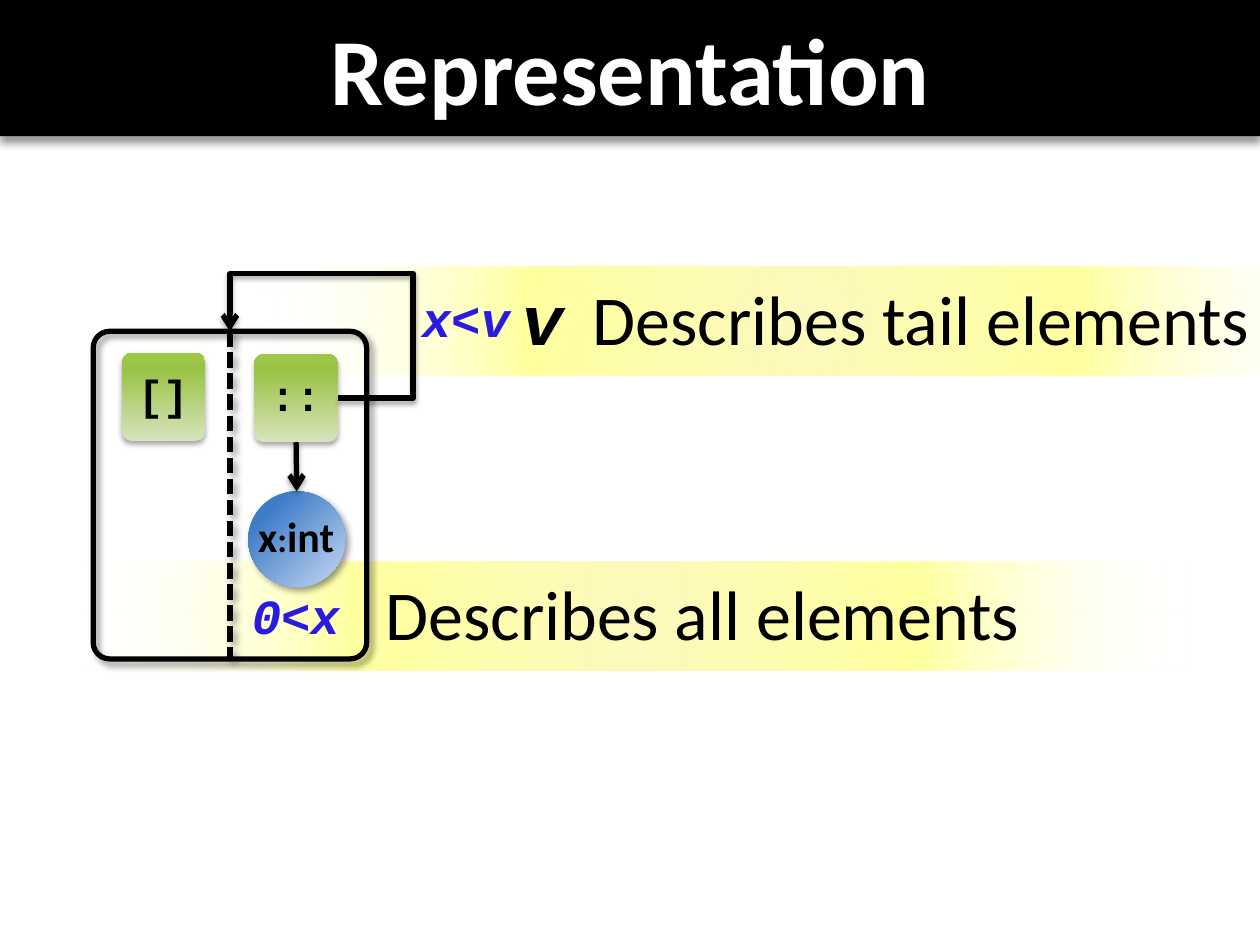
from dataclasses import dataclass
from typing import NamedTuple, Optional

from pptx import Presentation
from pptx.dml.color import RGBColor
from pptx.enum.dml import MSO_LINE
from pptx.enum.shapes import MSO_CONNECTOR as CXN, MSO_SHAPE as SHAPE
from pptx.enum.text import MSO_ANCHOR as ANCHOR, PP_ALIGN as ALIGN
from pptx.oxml import parse_xml
from pptx.oxml.ns import nsdecls, qn
from pptx.util import Inches, Pt


class Gradient(NamedTuple):
    stops: tuple  # (position %, colour, opacity %)
    direction: str  # DrawingML direction element


class Shadow(NamedTuple):
    opacity: int
    blur: float
    distance: float
    angle: int


class Run(NamedTuple):
    text: str
    size: int
    font: str
    color: str
    bold: bool = False
    italic: bool = False


class Box(NamedTuple):
    left: float
    top: float
    width: float
    height: float


def focus(l: int, t: int, r: int, b: int) -> str:
    return (f'<a:path path="circle"><a:fillToRect l="{l}000" t="{t}000" '
            f'r="{r}000" b="{b}000"/></a:path>')


@dataclass(frozen=True)
class Theme:
    black: str = "000000"
    white: str = "FFFFFF"
    predicate: str = "291BDF"
    sans: str = "Calibri"
    mono: str = "Courier New"
    title: int = 54
    body: int = 40
    formula: int = 28
    node: int = 24
    colon: int = 20
    stroke: float = 3
    band: Gradient = Gradient(
        ((0, "FDF9BF", 100), (51, "FFFF9F", 100), (100, "FFFFFF", 0)), focus(50, 50, 50, 50))
    green: Gradient = Gradient(
        ((0, "D7E4BD", 100), (80, "9BC348", 100), (100, "9DC746", 100)),
        '<a:lin ang="16200000" scaled="0"/>')
    blue: Gradient = Gradient(
        ((0, "C6D9F1", 100), (80, "3D7CC7", 100), (100, "3A7CCB", 100)), focus(100, 100, 0, 0))
    bar_shadow: Shadow = Shadow(40, 4, 4, 90)
    soft: Shadow = Shadow(40, 4, 3, 45)
    low: Shadow = Shadow(35, 3.1, 1.8, 90)


T = Theme()


def gradient_xml(g: Gradient):
    stops = "".join(
        f'<a:gs pos="{pos}000"><a:srgbClr val="{color}"><a:alpha val="{alpha}000"/>'
        f'</a:srgbClr></a:gs>' for pos, color, alpha in g.stops)
    return parse_xml(f'<a:gradFill {nsdecls("a")} rotWithShape="1">'
                     f'<a:gsLst>{stops}</a:gsLst>{g.direction}</a:gradFill>')


def effect_xml(shadow: Optional[Shadow]):
    inner = ""
    if shadow:
        inner = (f'<a:outerShdw blurRad="{Pt(shadow.blur)}" dist="{Pt(shadow.distance)}" '
                 f'dir="{shadow.angle * 60000}" algn="ctr" rotWithShape="0">'
                 f'<a:srgbClr val="{T.black}"><a:alpha val="{shadow.opacity}000"/>'
                 f'</a:srgbClr></a:outerShdw>')
    return parse_xml(f'<a:effectLst {nsdecls("a")}>{inner}</a:effectLst>')


def write(tf, runs, *, align=ALIGN.LEFT, anchor=ANCHOR.TOP, wrap=False, margins=None):
    """Fill a text frame with one paragraph of formatted runs."""
    tf.word_wrap, tf.vertical_anchor = wrap, anchor
    if margins:
        tf.margin_left, tf.margin_top, tf.margin_right, tf.margin_bottom = map(Inches, margins)
    p = tf.paragraphs[0]
    p.alignment = align
    for run in runs:
        r = p.add_run()
        r.text = run.text
        f = r.font
        f.size, f.name, f.bold, f.italic = Pt(run.size), run.font, run.bold, run.italic
        f.color.rgb = RGBColor.from_string(run.color)


def add_shape(s, kind, box: Box, *, fill=None, stroke=False, shadow=None, corner=None, runs=()):
    sp = s.shapes.add_shape(kind, *map(Inches, box))
    if corner is not None:
        sp.adjustments[0] = corner
    sp.fill.background()
    if isinstance(fill, Gradient):
        spPr = sp.element.spPr
        spPr.replace(spPr.find(qn("a:noFill")), gradient_xml(fill))
    elif fill:
        sp.fill.solid()
        sp.fill.fore_color.rgb = RGBColor.from_string(fill)
    if stroke:
        sp.line.color.rgb = RGBColor.from_string(T.black)
        sp.line.width = Pt(T.stroke)
    else:
        sp.line.fill.background()
    sp.element.spPr.append(effect_xml(shadow))
    if runs:
        write(sp.text_frame, runs, align=ALIGN.CENTER, anchor=ANCHOR.MIDDLE,
              margins=(0.09, 0, 0.1, 0.05))
    return sp


def add_link(s, start, start_side: int, end, end_side: int, *, shadow, kind=CXN.STRAIGHT,
             dashed=False, arrow=False):
    c = s.shapes.add_connector(kind, 0, 0, 0, 0)
    c.begin_connect(start, start_side)
    c.end_connect(end, end_side)
    c.line.color.rgb = RGBColor.from_string(T.black)
    c.line.width = Pt(T.stroke)
    if dashed:
        c.line.dash_style = MSO_LINE.SQUARE_DOT
    spPr = c.element.spPr
    if arrow:
        spPr.find(qn("a:ln")).append(parse_xml(f'<a:tailEnd {nsdecls("a")} type="arrow"/>'))
    spPr.append(effect_xml(shadow))
    return c


def add_text(s, box: Box, runs, *, wrap=False):
    write(s.shapes.add_textbox(*map(Inches, box)).text_frame, runs, wrap=wrap)


def main():
    prs = Presentation()
    prs.slide_width, prs.slide_height = Inches(10), Inches(7.5)
    s = prs.slides.add_slide(prs.slide_layouts[5])

    # Title on its bar
    title = s.shapes.title
    title.left, title.top, title.width, title.height = map(Inches, Box(0, 0, 10, 1.25))
    write(title.text_frame, [Run("Representation", T.title, T.sans, T.white, True)],
          align=ALIGN.CENTER, wrap=True, margins=(0.1, 0.09, 0.1, 0.05))
    bar = add_shape(s, SHAPE.RECTANGLE, Box(0, 0, 10, 1.08), fill=T.black, shadow=T.bar_shadow)
    title.element.addprevious(bar.element)

    # Highlight bands behind the descriptions
    for box in (Box(2.08, 2.12, 8.58, 0.86), Box(0.67, 4.46, 8.75, 0.86)):
        add_shape(s, SHAPE.ROUNDED_RECTANGLE, box, fill=T.band, corner=0.06)

    # List type: frame, two constructors and the element
    frame = add_shape(s, SHAPE.ROUNDED_RECTANGLE, Box(0.74, 2.63, 2.17, 2.6),
                      stroke=True, shadow=T.soft, corner=0.06)
    nil, cons = [
        add_shape(s, SHAPE.ROUNDED_RECTANGLE, Box(left, top, 0.66, 0.7), fill=T.green,
                  shadow=T.low, corner=0.12, runs=[Run(text, T.node, T.mono, T.black, True)])
        for text, left, top in (("[]", 0.97, 2.8), ("::", 2.02, 2.81))]
    element = add_shape(s, SHAPE.OVAL, Box(1.97, 3.9, 0.77, 0.76), fill=T.blue, shadow=T.soft,
                        runs=[Run(text, size, T.sans, T.black, True) for text, size in
                              (("x", T.node), (":", T.colon), ("int", T.node))])

    # Links: head, recursive tail and the divider
    add_link(s, cons, 2, element, 0, shadow=T.low, arrow=True)
    tail = add_link(s, cons, 3, frame, 0, shadow=T.low, kind=CXN.ELBOW, arrow=True)
    geom = tail.element.spPr.find(qn("a:prstGeom"))
    geom.getparent().replace(geom, parse_xml(
        f'<a:prstGeom {nsdecls("a")} prst="bentConnector4"><a:avLst>'
        '<a:gd name="adj1" fmla="val -70100"/><a:gd name="adj2" fmla="val 186500"/>'
        '</a:avLst></a:prstGeom>'))
    add_link(s, frame, 0, frame, 2, shadow=T.soft, dashed=True)

    # Predicates and their descriptions
    for text, left, top in (("0<x", 1.9, 4.6), ("x<v", 3.25, 2.24)):
        add_text(s, Box(left, top, 1.08, 0.57),
                 [Run(text, T.formula, T.mono, T.predicate, True, True)], wrap=True)
    add_text(s, Box(2.96, 4.48, 5.28, 0.77),
             [Run("Describes all elements", T.body, T.sans, T.black)])
    add_text(s, Box(4.04, 2.14, 6.08, 0.77),
             [Run("v", T.body, T.mono, T.black, True, True),
              Run(" ", T.formula, T.mono, T.black, True, True),
              Run("Describes tail elements", T.body, T.sans, T.black)])

    prs.save("out.pptx")


if __name__ == "__main__":
    main()
